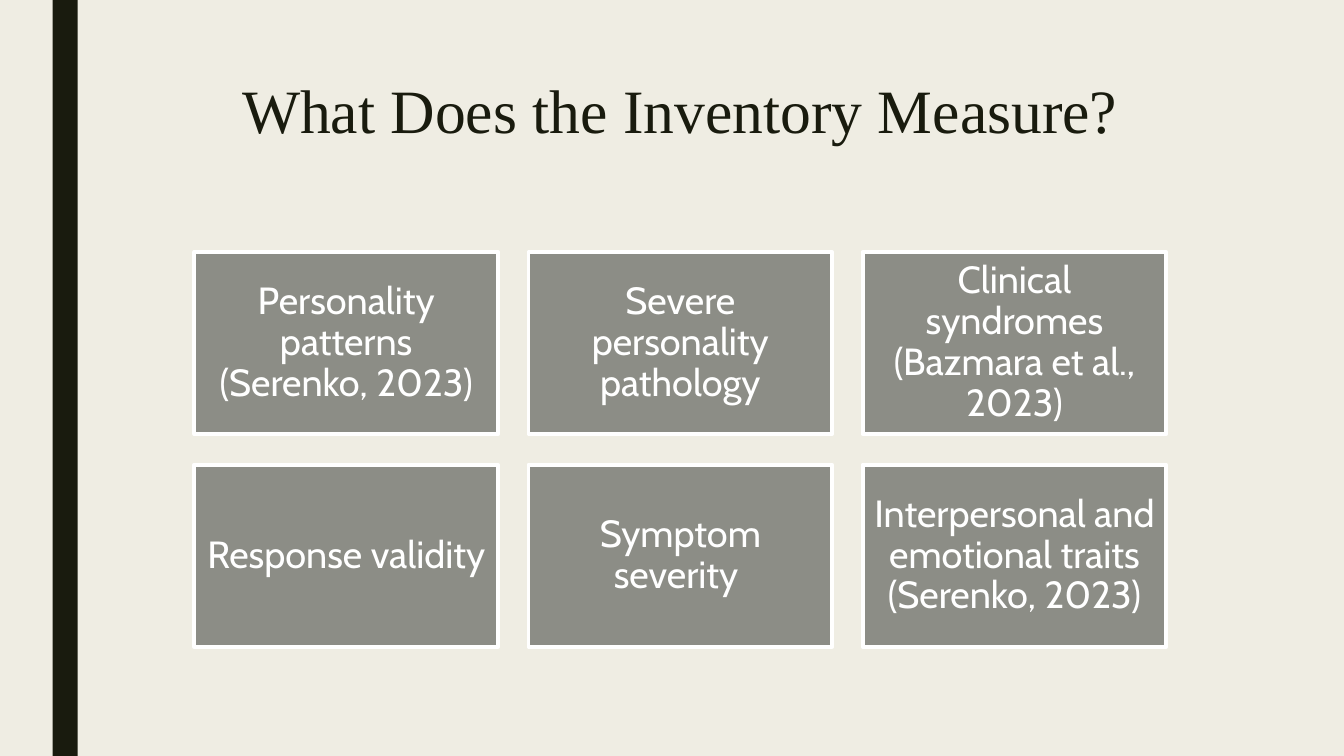
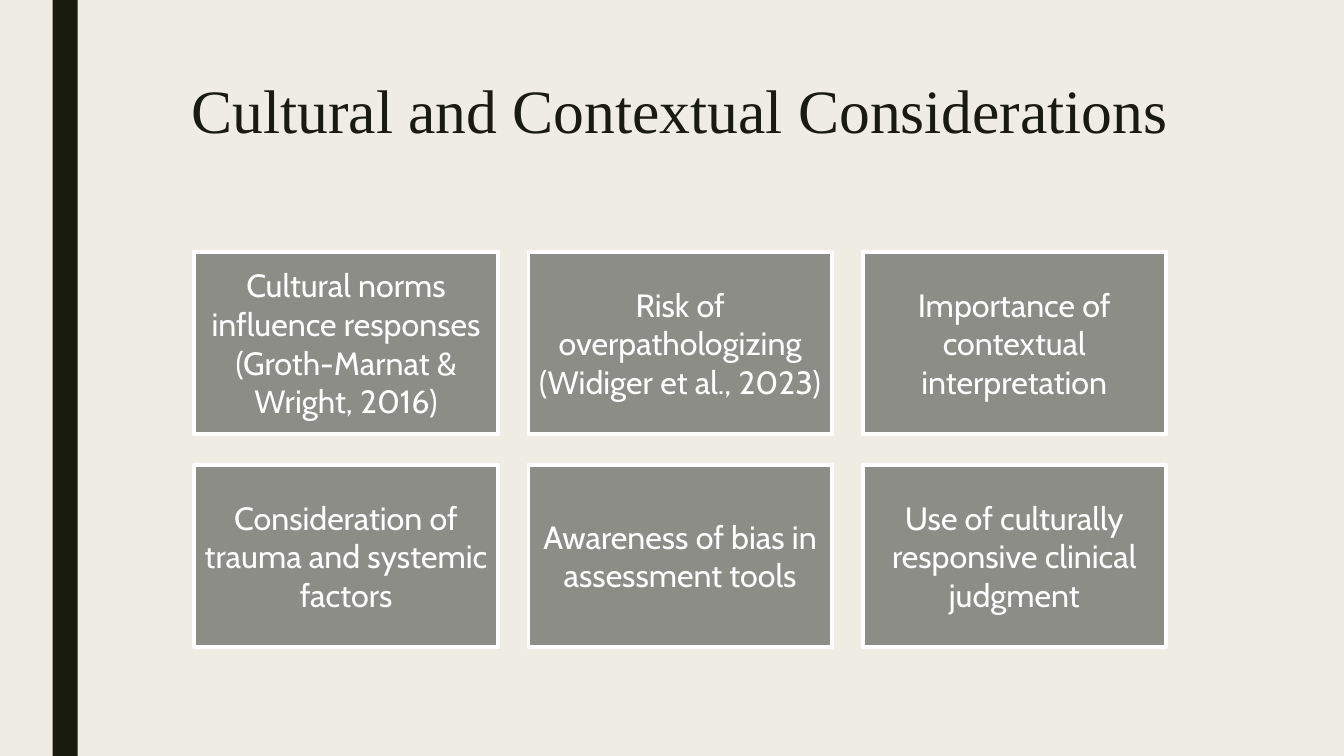
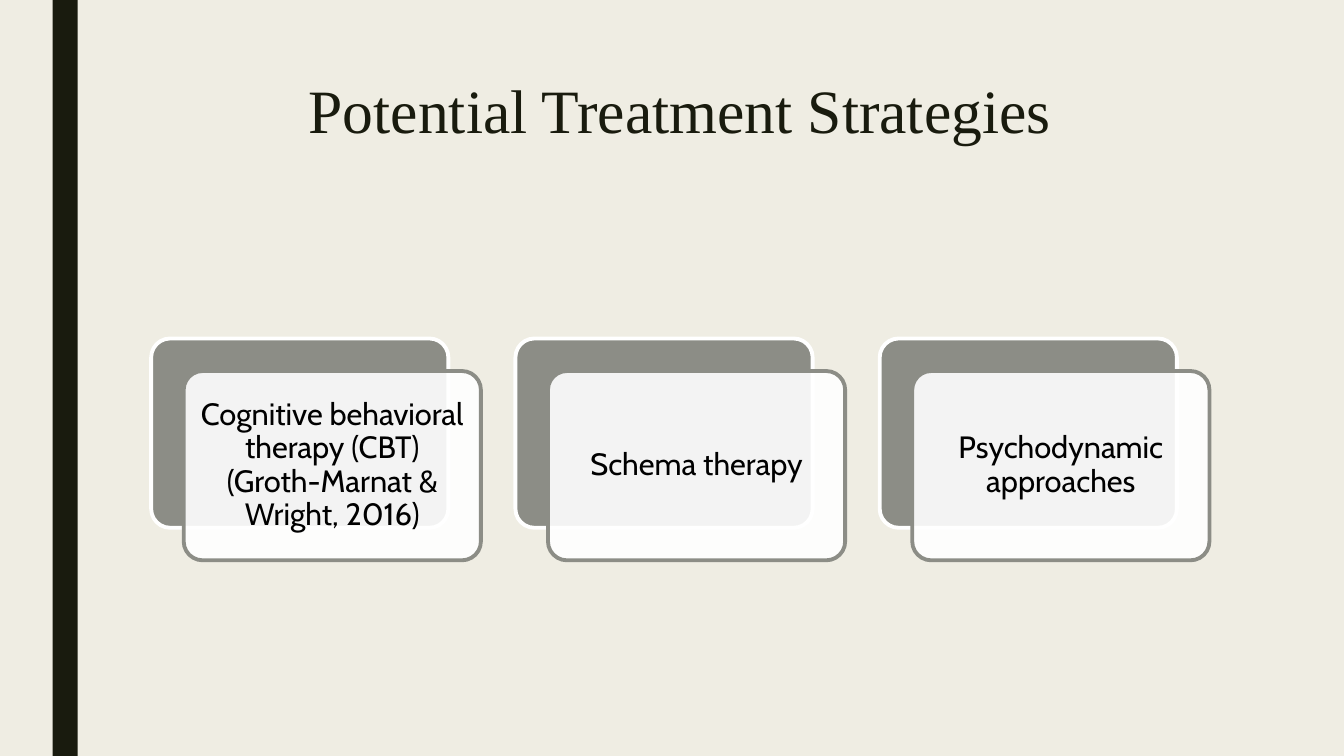
from dataclasses import dataclass

from lxml.etree import SubElement
from pptx import Presentation
from pptx.dml.color import RGBColor
from pptx.enum.shapes import MSO_SHAPE
from pptx.enum.text import MSO_ANCHOR, PP_ALIGN
from pptx.oxml.ns import qn
from pptx.util import Cm, Pt


@dataclass(frozen=True)
class Theme:
    paper: str = "EFEDE3"
    ink: str = "191B0E"
    grey: str = "8C8D86"
    white: str = "FFFFFF"
    black: str = "000000"
    title_font: str = "Times New Roman"
    body_font: str = "Cabin"
    title_size: int = 44
    large_size: int = 27
    medium_size: int = 23
    card_size: int = 22
    outline: float = 2.75


@dataclass(frozen=True)
class Box:
    """A rectangle in centimetres."""
    left: float
    top: float
    width: float
    height: float

    def lengths(self):
        return Cm(self.left), Cm(self.top), Cm(self.width), Cm(self.height)


THEME = Theme()
PAGE = Box(0, 0, 33.87, 19.05)
BAND = Box(1.33, 0, 0.63, PAGE.height)
TITLE = Box(3.81, 1.92, 26.67, 4.11)
TILE_AREA = Box(TITLE.left, 6.35, TITLE.width, 9.95)
CARD_AREA = Box(TITLE.left, 8.53, TITLE.width, 5.59)


def rgb(colour):
    return RGBColor.from_string(colour)


def add_panel(page, kind, box, fill, line=None):
    panel = page.shapes.add_shape(kind, *box.lengths())
    panel.shadow.inherit = False
    panel.fill.solid()
    panel.fill.fore_color.rgb = rgb(fill)
    if line:
        panel.line.color.rgb = rgb(line)
        panel.line.width = Pt(THEME.outline)
    else:
        panel.line.fill.background()
    return panel


def write(shape, text, font, size, colour, spacing):
    frame = shape.text_frame
    frame.word_wrap = True
    para = frame.paragraphs[0]
    para.text = text
    para.alignment = PP_ALIGN.CENTER
    para.line_spacing = spacing
    para.font.name = font
    para.font.size = Pt(size)
    para.font.color.rgb = rgb(colour)
    return frame


def write_label(shape, text, size, colour, spacing):
    frame = write(shape, text, THEME.body_font, size, colour, spacing)
    frame.vertical_anchor = MSO_ANCHOR.MIDDLE
    # The inset grows with the type size
    inset = Cm(0.01 * size)
    frame.margin_left = frame.margin_right = inset
    frame.margin_top = frame.margin_bottom = inset


def add_page(deck, title):
    """Add a slide with the side band and the title."""
    page = deck.slides.add_slide(deck.slide_layouts[6])
    add_panel(page, MSO_SHAPE.RECTANGLE, BAND, THEME.ink)
    heading = page.shapes.add_textbox(*TITLE.lengths())
    write(heading, title, THEME.title_font, THEME.title_size, THEME.ink, 0.89)
    return page


def add_tiles(page, area, labels, size, spacing):
    """Place labelled tiles in rows of three, centred in the area."""
    columns, gap, width = 3, 0.77, 7.65
    rows = -(-len(labels) // columns)
    height = (area.height - (rows - 1) * gap) / rows
    grid_width = columns * width + (columns - 1) * gap
    left = area.left + (area.width - grid_width) / 2
    for index, label in enumerate(labels):
        row, column = divmod(index, columns)
        box = Box(left + column * (width + gap),
                  area.top + row * (height + gap), width, height)
        tile = add_panel(page, MSO_SHAPE.RECTANGLE, box, THEME.grey, THEME.white)
        write_label(tile, label, size, THEME.white, spacing)


def add_cards(page, area, labels):
    """Spread cards over the area, each in front of a shifted grey backing."""
    shift, width = 0.82, 7.49
    height = area.height - shift
    pitch = (area.width - width - shift) / (len(labels) - 1)
    for index, label in enumerate(labels):
        left = area.left + index * pitch
        backing = add_panel(page, MSO_SHAPE.ROUNDED_RECTANGLE,
                            Box(left, area.top, width, height),
                            THEME.grey, THEME.white)
        card = add_panel(page, MSO_SHAPE.ROUNDED_RECTANGLE,
                         Box(left + shift, area.top + shift, width, height),
                         THEME.white, THEME.grey)
        backing.adjustments[0] = card.adjustments[0] = 0.1
        # Let the backing show faintly through the card
        fill_colour = card.element.spPr.find(qn("a:solidFill"))[0]
        SubElement(fill_colour, qn("a:alpha"), val="90000")
        write_label(card, label, THEME.card_size, THEME.black, 0.9)


def main():
    deck = Presentation()
    deck.slide_width, deck.slide_height = Cm(PAGE.width), Cm(PAGE.height)
    paper = deck.slide_master.background.fill
    paper.solid()
    paper.fore_color.rgb = rgb(THEME.paper)

    # Scales of the test
    page = add_page(deck, "What Does the Inventory Measure?")
    add_tiles(page, TILE_AREA, [
        "Personality patterns (Serenko, 2023)",
        "Severe personality pathology",
        "Clinical syndromes (Bazmara et al., 2023)",
        "Response validity",
        "Symptom severity ",
        "Interpersonal and emotional traits (Serenko, 2023)",
    ], THEME.large_size, 0.9)

    # Culture and context
    page = add_page(deck, "Cultural and Contextual Considerations")
    add_tiles(page, TILE_AREA, [
        "Cultural norms influence responses (Groth-Marnat & Wright, 2016)",
        "Risk of overpathologizing (Widiger et al., 2023)",
        "Importance of contextual interpretation",
        "Consideration of trauma and systemic factors",
        "Awareness of bias in assessment tools",
        "Use of culturally responsive clinical judgment",
    ], THEME.medium_size, 1.0)

    # Treatment
    page = add_page(deck, "Potential Treatment Strategies")
    add_cards(page, CARD_AREA, [
        "Cognitive behavioral therapy (CBT) (Groth-Marnat & Wright, 2016)",
        "Schema therapy",
        "Psychodynamic approaches",
    ])

    deck.save("out.pptx")


if __name__ == "__main__":
    main()
